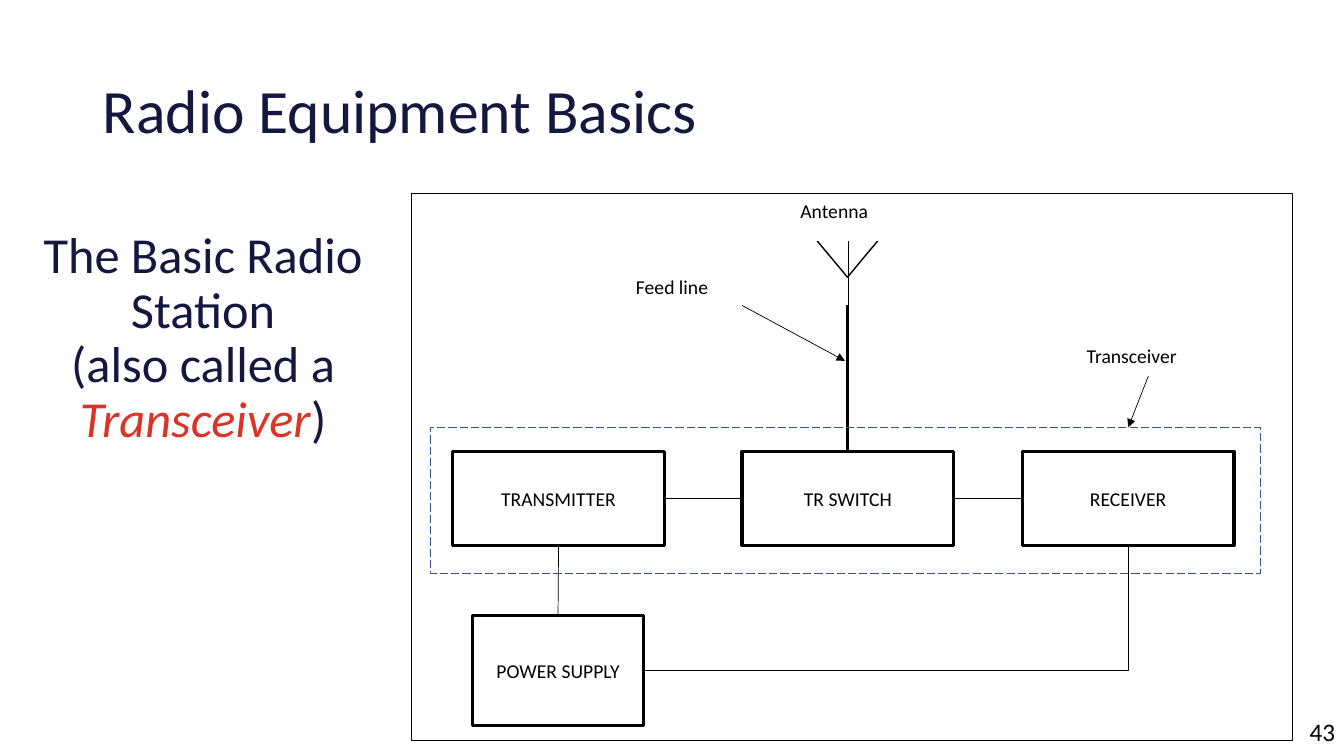
from pptx import Presentation
from pptx.dml.color import RGBColor
from pptx.enum.dml import MSO_LINE
from pptx.enum.shapes import MSO_CONNECTOR, MSO_SHAPE
from pptx.enum.text import MSO_ANCHOR, MSO_AUTO_SIZE, PP_ALIGN
from pptx.oxml.ns import qn
from pptx.util import Inches, Pt
from lxml import etree

BLACK = RGBColor(0x00, 0x00, 0x00)
WHITE = RGBColor(0xFF, 0xFF, 0xFF)
NAVY = RGBColor(0x14, 0x18, 0x3F)
RED = RGBColor(0xDA, 0x34, 0x27)
BLUE = RGBColor(0x32, 0x54, 0x91)

LEFT, CENTER, RIGHT = PP_ALIGN.LEFT, PP_ALIGN.CENTER, PP_ALIGN.RIGHT
TOP, MIDDLE = MSO_ANCHOR.TOP, MSO_ANCHOR.MIDDLE
RECT, TRIANGLE = MSO_SHAPE.RECTANGLE, MSO_SHAPE.ISOSCELES_TRIANGLE
STRAIGHT, ELBOW = MSO_CONNECTOR.STRAIGHT, MSO_CONNECTOR.ELBOW
LONG_DASH = MSO_LINE.LONG_DASH
NO_AUTOFIT = MSO_AUTO_SIZE.NONE
SIDE_TOP, SIDE_LEFT, SIDE_BOTTOM, SIDE_RIGHT = range(4)


def write(tf, paragraphs, size=14, color=BLACK, font="Calibri", align=LEFT,
          anchor=TOP, spacing=None):
    """Fill a text frame; each paragraph is a list of (text, run colour or None)."""
    tf.word_wrap = True
    tf.auto_size = NO_AUTOFIT
    tf.vertical_anchor = anchor
    for i, runs in enumerate(paragraphs):
        p = tf.add_paragraph() if i else tf.paragraphs[0]
        p.alignment = align
        if spacing:
            p.line_spacing = spacing
        for text, accent in runs:
            r = p.add_run()
            r.text = text
            r.font.name = font
            r.font.size = Pt(size)
            r.font.color.rgb = accent or color
            r.font.italic = accent is not None


class Diagram:
    def __init__(self, slide, line_color=BLACK, thin=0.5, thick=2.25):
        self.s = slide
        self.line_color = line_color
        self.thin = thin
        self.thick = thick

    def title(self, text, x, y, w, h):
        sp = self.s.shapes.title
        sp.left, sp.top, sp.width, sp.height = map(Inches, (x, y, w, h))
        write(sp.text_frame, [[(text, None)]], size=44, color=NAVY,
              anchor=MIDDLE, spacing=0.9)

    def text(self, paragraphs, x, y, w, h, **style):
        sp = self.s.shapes.add_textbox(*map(Inches, (x, y, w, h)))
        write(sp.text_frame, paragraphs, **style)

    def label(self, text, x, y):
        self.text([[(text, None)]], x, y, 1.9, 0.44)

    def shape(self, kind, x, y, w, h, fill=None, line=None, width=1, dash=None):
        sp = self.s.shapes.add_shape(kind, *map(Inches, (x, y, w, h)))
        sp.shadow.inherit = False
        if fill is None:
            sp.fill.background()
        else:
            sp.fill.solid()
            sp.fill.fore_color.rgb = fill
        sp.line.color.rgb = self.line_color if line is None else line
        sp.line.width = Pt(width)
        if dash:
            sp.line.dash_style = dash
        return sp

    def block(self, text, x, y, w=2.1, h=0.93):
        sp = self.shape(RECT, x, y, w, h, width=self.thick)
        write(sp.text_frame, [[(text, None)]], align=CENTER, anchor=MIDDLE)
        return sp

    def line(self, start=(0, 0), end=(0, 0), kind=STRAIGHT, width=None,
             begin_at=None, end_at=None, arrow=False):
        """Draw a line between points, or between (block, side) joints."""
        cn = self.s.shapes.add_connector(kind, *map(Inches, (*start, *end)))
        if begin_at:
            cn.begin_connect(*begin_at)
        if end_at:
            cn.end_connect(*end_at)
        cn.line.color.rgb = self.line_color
        cn.line.width = Pt(width or self.thin)
        sp_pr = cn._element.spPr
        if kind == ELBOW:
            sp_pr.find(qn("a:prstGeom")).set("prst", "bentConnector2")
        if arrow:
            etree.SubElement(sp_pr.find(qn("a:ln")), qn("a:tailEnd"), type="triangle")
        etree.SubElement(sp_pr, qn("a:effectLst"))


def main():
    prs = Presentation()
    prs.slide_width, prs.slide_height = Inches(13.33), Inches(7.5)
    d = Diagram(prs.slides.add_slide(prs.slide_layouts[5]))

    d.text([[("43", None)]], 12.66, 7.06, 0.68, 0.4, size=18, align=RIGHT)
    d.title("Radio Equipment Basics", 0.92, 0.4, 11.5, 1.45)

    transmitter, switch, receiver = [
        d.block(name, x, 4.48) for name, x in
        (("TRANSMITTER", 4.49), ("TR SWITCH", 7.36), ("RECEIVER", 10.14))]
    power = d.block("POWER SUPPLY", 4.69, 6.11, 1.69, 1.09)

    d.line(begin_at=(power, SIDE_TOP), end_at=(transmitter, SIDE_BOTTOM))
    d.line(begin_at=(power, SIDE_RIGHT), end_at=(receiver, SIDE_BOTTOM), kind=ELBOW)
    for a, b in ((transmitter, switch), (switch, receiver)):
        d.line(begin_at=(a, SIDE_RIGHT), end_at=(b, SIDE_LEFT))

    # Feed line and antenna; the white bar hides the triangle's flat edge
    mast_x = 8.41
    d.line(end=(mast_x, 3.03), begin_at=(switch, SIDE_TOP), width=d.thick)
    d.line((mast_x, 3.03), (mast_x, 2.38))
    d.shape(TRIANGLE, 8.08, 2.36, 0.65, 0.39).rotation = 180
    d.shape(RECT, 7.89, 2.18, 1.14, 0.2, fill=WHITE, line=WHITE)

    d.shape(RECT, 4.27, 4.24, 8.23, 1.45, line=BLUE, width=0.75, dash=LONG_DASH)
    d.label("Transceiver", 10.68, 3.36)
    d.line((11.39, 3.73), (11.19, 4.24), arrow=True)
    d.label("Antenna", 7.84, 1.92)
    d.line((7.36, 3.03), (8.38, 3.58), arrow=True)
    d.label("Feed line", 6.21, 2.68)
    d.shape(RECT, 4.08, 1.92, 8.74, 5.43)

    d.text([[("The Basic Radio Station", None)],
            [("(also called a ", None), ("Transceiver", RED), (")", None)]],
           0.15, 2.14, 3.73, 2.45, size=36, color=NAVY, align=CENTER,
           anchor=MIDDLE, spacing=0.9)

    prs.save("out.pptx")


if __name__ == "__main__":
    main()
